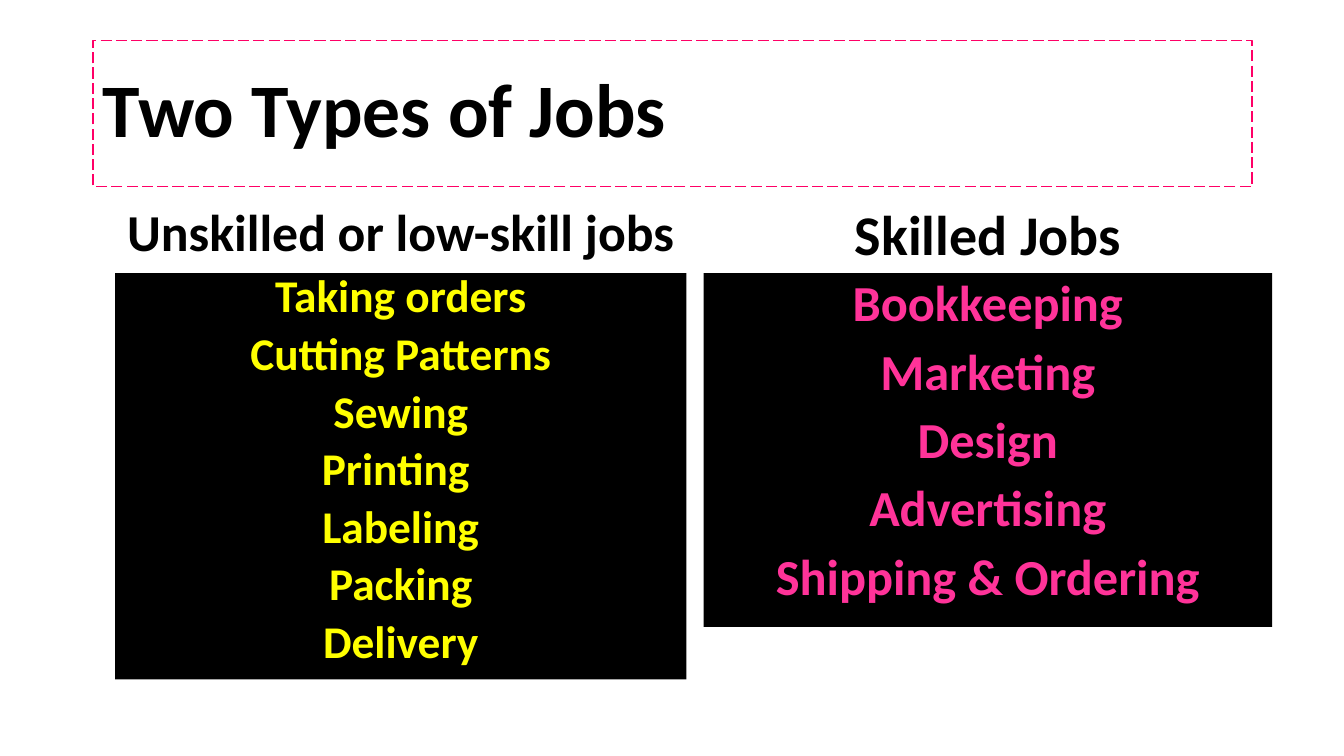
from lxml.etree import SubElement
from pptx import Presentation
from pptx.dml.color import RGBColor
from pptx.enum.dml import MSO_LINE
from pptx.enum.text import MSO_ANCHOR as ANCHOR, MSO_AUTO_SIZE as FIT, PP_ALIGN as ALIGN
from pptx.oxml.ns import qn
from pptx.util import Cm, Pt

UNSKILLED = ["Taking orders", "Cutting Patterns", "Sewing", "Printing ",
             "Labeling", "Packing", "Delivery"]
SKILLED = ["Bookkeeping", "Marketing", "Design", "Advertising", "Shipping & Ordering"]


def rgb(color):
    return RGBColor.from_string(color)


def place(sp, left, top, width, height, anchor):
    sp.left, sp.top, sp.width, sp.height = Cm(left), Cm(top), Cm(width), Cm(height)
    tf = sp.text_frame
    tf.word_wrap = True
    tf.auto_size = FIT.NONE
    tf.vertical_anchor = anchor


def write(sp, lines, size, color, align, spacing=0.9):
    tf = sp.text_frame
    tf.text = "\n".join(lines)
    for i, p in enumerate(tf.paragraphs):
        pPr = p._p.get_or_add_pPr()
        pPr.set("marL", "0")
        pPr.set("indent", "0")
        SubElement(pPr, qn("a:buNone"))
        p.alignment = align
        p.line_spacing = spacing
        p.space_before = Pt(10 if i else 0)
        for r in p.runs:
            r.font.name = "Calibri"
            r.font.size = Pt(size)
            r.font.bold = True
            r.font.color.rgb = rgb(color)


def add_title(sp, text):
    place(sp, 2.34, 1.02, 29.21, 3.68, ANCHOR.MIDDLE)
    write(sp, [text], 54, "000000", ALIGN.LEFT)
    sp.line.color.rgb = rgb("FF0066")
    sp.line.width = Pt(1)
    sp.line.dash_style = MSO_LINE.LONG_DASH


def add_heading(sp, text, left, top, width, size):
    place(sp, left, top, width, 2.29, ANCHOR.BOTTOM)
    write(sp, [text], size, "000000", ALIGN.CENTER)


def add_job_list(sp, jobs, left, width, height, size, color, spacing):
    place(sp, left, 6.88, width, height, ANCHOR.TOP)
    write(sp, jobs, size, color, ALIGN.CENTER, spacing)
    sp.fill.solid()
    sp.fill.fore_color.rgb = rgb("000000")


def main():
    """Build the slide comparing two types of jobs."""
    prs = Presentation()
    prs.slide_width, prs.slide_height = Cm(33.87), Cm(19.05)
    s = prs.slides.add_slide(prs.slide_layouts.get_by_name("Comparison"))
    title, left_head, left_list, right_head, right_list = s.placeholders
    add_title(title, "Two Types of Jobs")
    add_heading(left_head, "Unskilled or low-skill jobs", 2.9, 4.45, 14.4, 37)
    add_job_list(left_list, UNSKILLED, 2.9, 14.4, 10.24, 32.4, "FFFF00", 0.8)
    add_heading(right_head, "Skilled Jobs", 17.73, 4.57, 14.33, 40)
    add_job_list(right_list, SKILLED, 17.73, 14.33, 8.92, 36, "FF3399", 0.9)
    prs.save("out.pptx")


if __name__ == "__main__":
    main()
